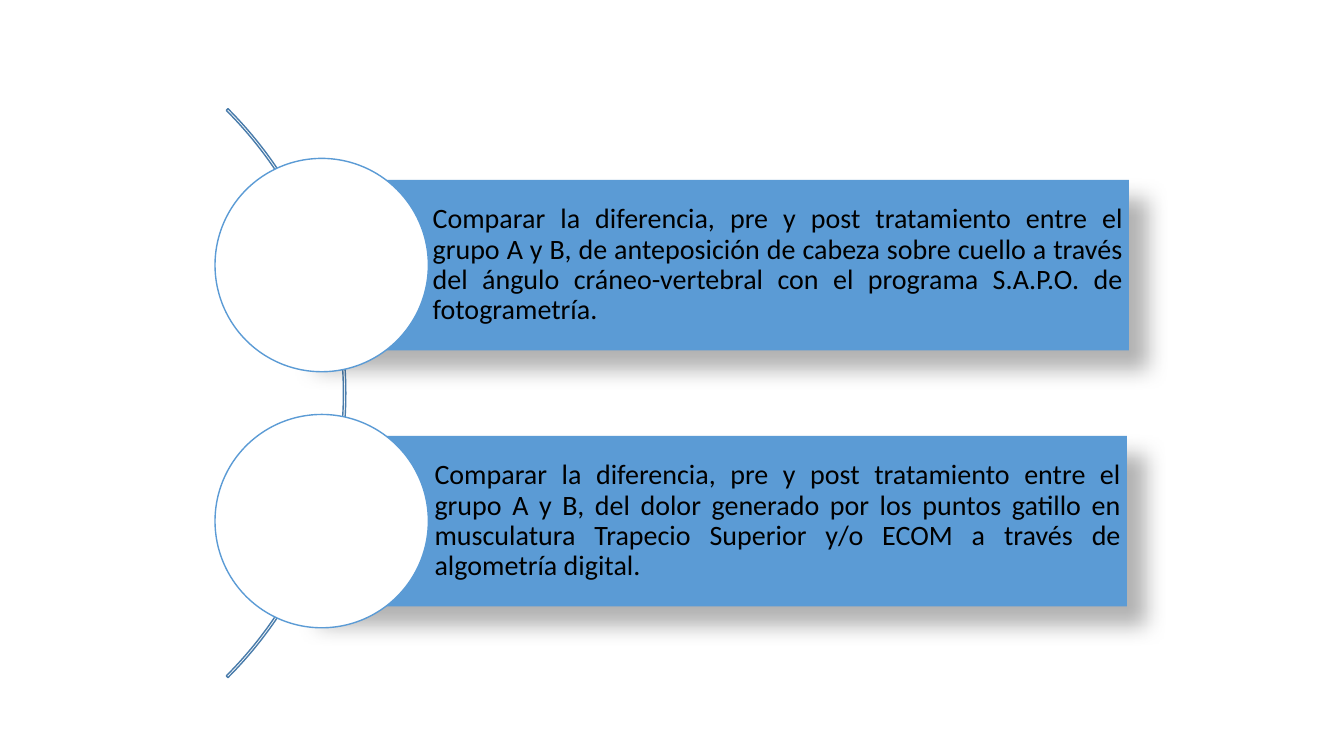
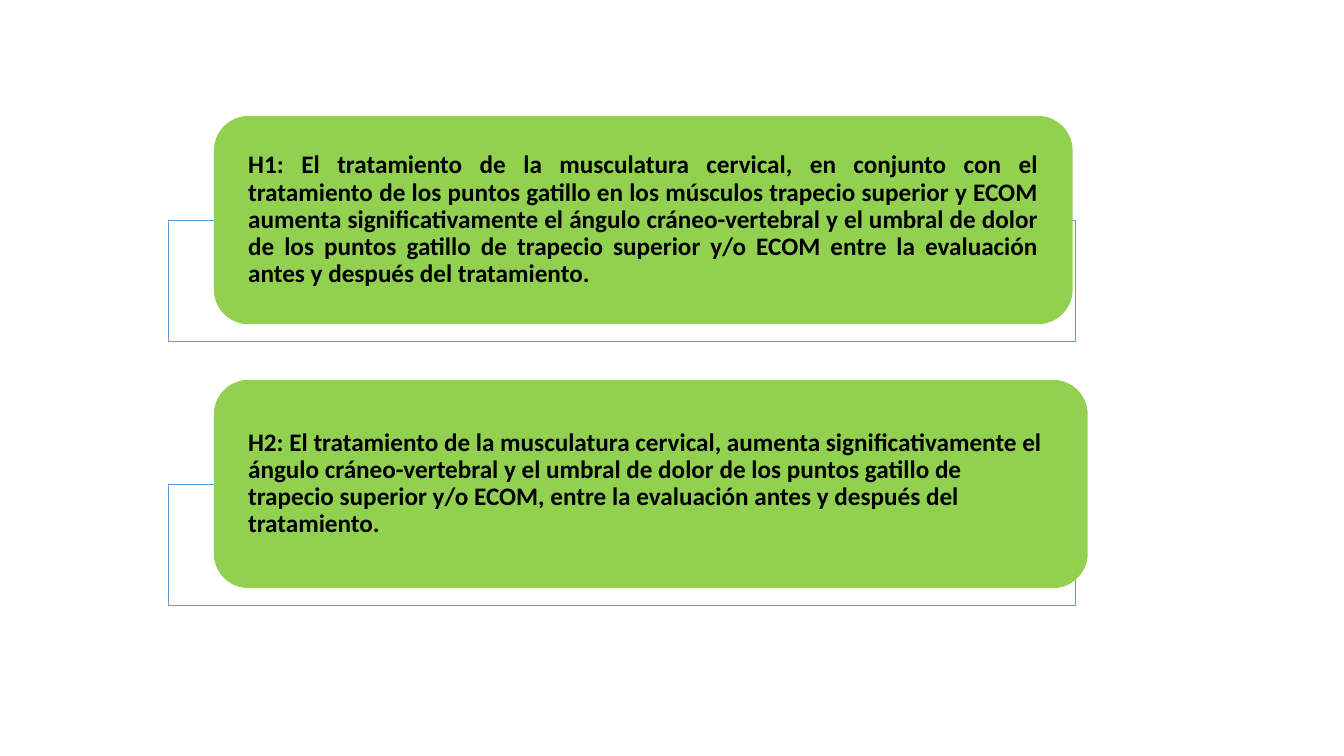
from lxml import etree
from pptx import Presentation
from pptx.dml.color import RGBColor
from pptx.enum.shapes import MSO_SHAPE
from pptx.enum.text import MSO_ANCHOR, PP_ALIGN
from pptx.oxml.ns import qn
from pptx.util import Pt

# Content: text with bar left and width, or box width and alignment
OBJECTIVES = [
    ("Comparar la diferencia, pre y post tratamiento entre el grupo A y B, de "
     "anteposición de cabeza sobre cuello a través del ángulo cráneo-vertebral "
     "con el programa S.A.P.O. de fotogrametría.", 212.4, 594),
    ("Comparar la diferencia, pre y post tratamiento entre el grupo A y B, del "
     "dolor generado por los puntos gatillo en musculatura Trapecio Superior y/o "
     "ECOM a través de algometría digital.", 213.8, 591.2),
]
HYPOTHESES = [
    ("H1: El tratamiento de la musculatura cervical, en conjunto con el "
     "tratamiento de los puntos gatillo en los músculos trapecio superior y ECOM "
     "aumenta significativamente el ángulo cráneo-vertebral y el umbral de dolor "
     "de los puntos gatillo de trapecio superior y/o ECOM entre la evaluación "
     "antes y después del tratamiento.", 613.4, PP_ALIGN.JUSTIFY),
    ("H2: El tratamiento de la musculatura cervical, aumenta significativamente "
     "el ángulo cráneo-vertebral y el umbral de dolor de los puntos gatillo de "
     "trapecio superior y/o ECOM, entre la evaluación antes y después del "
     "tratamiento.", 624.2, PP_ALIGN.LEFT),
]

# Shared style
FONT = "Calibri"
BLACK = RGBColor(0x00, 0x00, 0x00)
WHITE = RGBColor(0xFF, 0xFF, 0xFF)
BLUE = RGBColor(0x5B, 0x9B, 0xD5)
ARC_BLUE = RGBColor(0x49, 0x7C, 0xAB)
GREEN = RGBColor(0x92, 0xD0, 0x50)


def add_box(s, kind, x, y, w, h, fill=None, line=None, line_width=1):
    sp = s.shapes.add_shape(kind, Pt(x), Pt(y), Pt(w), Pt(h))
    sp.shadow.inherit = False
    if fill is None:
        sp.fill.background()
    else:
        sp.fill.solid()
        sp.fill.fore_color.rgb = fill
    if line is None:
        sp.line.fill.background()
    else:
        sp.line.color.rgb = line
        sp.line.width = Pt(line_width)
    return sp


def add_text(sp, text, size=18, bold=False, align=PP_ALIGN.JUSTIFY, insets=(0, 0, 0, 0)):
    tf = sp.text_frame
    tf.word_wrap = True
    tf.vertical_anchor = MSO_ANCHOR.MIDDLE
    tf.margin_left, tf.margin_top, tf.margin_right, tf.margin_bottom = map(Pt, insets)
    p = tf.paragraphs[0]
    p.alignment = align
    p.line_spacing = 0.9
    r = p.add_run()
    r.text = text
    r.font.name = FONT
    r.font.size = Pt(size)
    r.font.bold = bold
    r.font.color.rgb = BLACK


def add_shadow(sp, blur=15, distance=18, angle=45, opacity=30):
    effects = sp._element.spPr.find(qn("a:effectLst"))
    shadow = etree.SubElement(
        effects, qn("a:outerShdw"), blurRad=str(Pt(blur)), dist=str(Pt(distance)),
        dir=str(angle * 60000), algn="tl", rotWithShape="0")
    color = etree.SubElement(shadow, qn("a:srgbClr"), val=str(BLACK))
    etree.SubElement(color, qn("a:alpha"), val=str(opacity * 1000))


def build_objectives(s):
    middle, pitch = 280.8, 182.9
    arc_size, bar_height, circle_size = 574.6, 121.8, 152.4

    # Arc behind the bars
    arc = add_box(s, MSO_SHAPE.BLOCK_ARC, -327.6, middle - arc_size / 2,
                  arc_size, arc_size, line=ARC_BLUE)
    for i, value in enumerate((189, 27, 0.003)):
        arc.adjustments[i] = value

    # Bars, each with a circle over its left end
    for i, (text, left, width) in enumerate(OBJECTIVES):
        center = middle + (i - 0.5) * pitch
        bar = add_box(s, MSO_SHAPE.RECTANGLE, left, center - bar_height / 2,
                      width, bar_height, fill=BLUE)
        add_shadow(bar)
        add_text(bar, text, size=20, insets=(96.6, 4.3, 4.3, 4.3))
        add_box(s, MSO_SHAPE.OVAL, 153.6, center - circle_size / 2,
                circle_size, circle_size, fill=WHITE, line=BLUE)


def build_hypotheses(s):
    top, pitch, frame_drop = 82.8, 188.5, 74.6

    # Outlined frames with a green box over each
    for i, (text, width, align) in enumerate(HYPOTHESES):
        y = top + i * pitch
        add_box(s, MSO_SHAPE.RECTANGLE, 120.2, y + frame_drop, 648, 86.4,
                fill=WHITE, line=BLUE, line_width=0.5)
        box = add_box(s, MSO_SHAPE.ROUNDED_RECTANGLE, 152.8, y, width, 148.8, fill=GREEN)
        add_text(box, text, bold=True, align=align, insets=(17.2, 0, 17.2, 0))


def main():
    prs = Presentation()
    prs.slide_width, prs.slide_height = Pt(960), Pt(540)
    for build in (build_objectives, build_hypotheses):
        build(prs.slides.add_slide(prs.slide_layouts[6]))
    prs.save("out.pptx")


if __name__ == "__main__":
    main()
